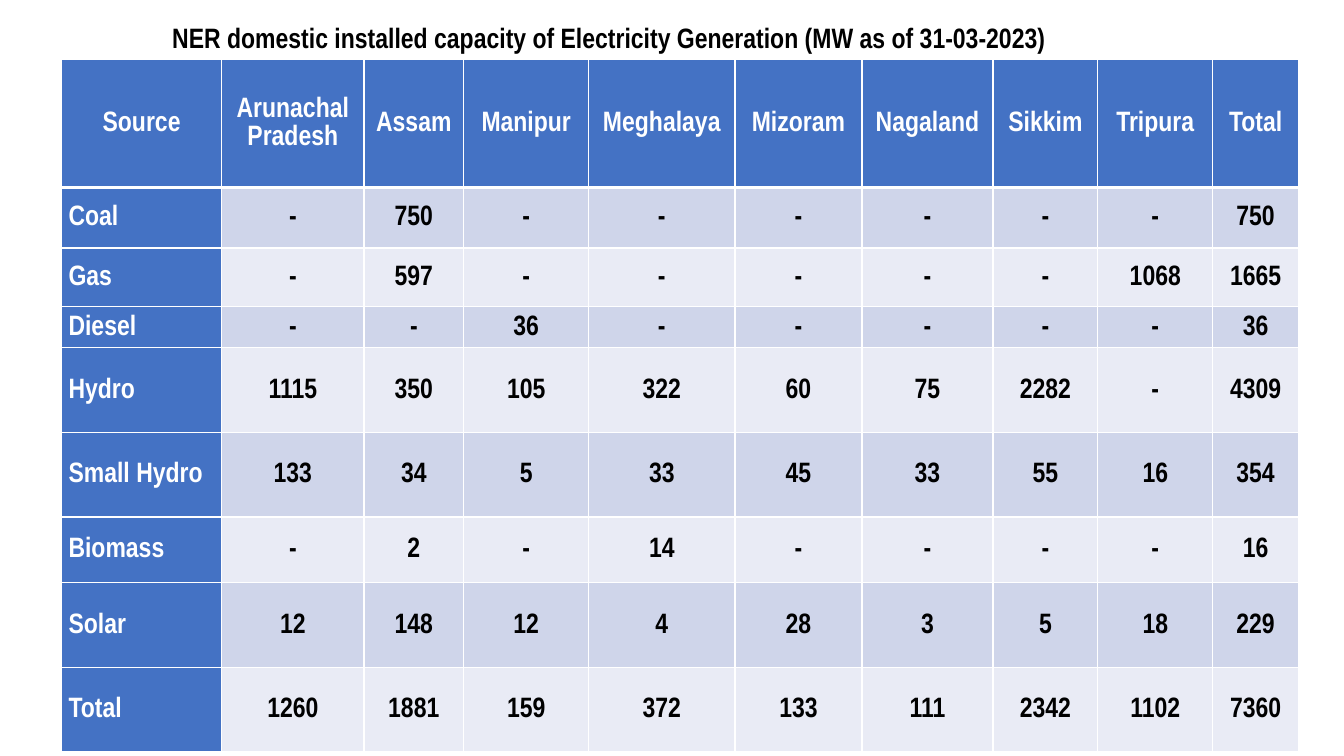
from typing import NamedTuple

from lxml.etree import SubElement
from pptx import Presentation
from pptx.dml.color import RGBColor
from pptx.enum.text import MSO_ANCHOR as Anchor, PP_ALIGN as Align
from pptx.oxml.ns import qn
from pptx.util import Emu, Pt

EMU_PER_PX = 9144
FONT = "Arial Narrow"
TEXT_SIZE = 20
LINE_SPACING = 1.07
CELL_MARGIN = 7
COLORS = {
    "heading": "4472C4",
    "band_dark": "CFD5EA",
    "band_light": "E9EBF5",
    "white": "FFFFFF",
    "black": "000000",
}


class Column(NamedTuple):
    title: str
    width: int


class SourceRow(NamedTuple):
    source: str
    height: int
    capacities: str


TITLE = "NER domestic installed capacity of Electricity Generation (MW as of 31-03-2023)"
HEADER_HEIGHT = 127
COLUMNS = [
    Column("Source", 159),
    Column("Arunachal Pradesh", 141),
    Column("Assam", 99),
    Column("Manipur", 124),
    Column("Meghalaya", 145),
    Column("Mizoram", 126),
    Column("Nagaland", 130),
    Column("Sikkim", 104),
    Column("Tripura", 114),
    Column("Total", 85),
]
SOURCE_ROWS = [
    SourceRow("Coal", 60, "- 750 - - - - - - 750"),
    SourceRow("Gas", 58, "- 597 - - - - - 1068 1665"),
    SourceRow("Diesel", 41, "- - 36 - - - - - 36"),
    SourceRow("Hydro", 84, "1115 350 105 322 60 75 2282 - 4309"),
    SourceRow("Small Hydro", 84, "133 34 5 33 45 33 55 16 354"),
    SourceRow("Biomass", 65, "- 2 - 14 - - - - 16"),
    SourceRow("Solar", 84, "12 148 12 4 28 3 5 18 229"),
    SourceRow("Total", 84, "1260 1881 159 372 133 111 2342 1102 7360"),
]


def px(length: int) -> Emu:
    return Emu(length * EMU_PER_PX)


def rgb(name: str) -> RGBColor:
    return RGBColor.from_string(COLORS[name])


def add_bold_run(p, text: str, color: str) -> None:
    r = p.add_run()
    r.text = text
    r.font.name = FONT
    r.font.size = Pt(TEXT_SIZE)
    r.font.bold = True
    r.font.color.rgb = rgb(color)


def set_borders(cell, top: int, bottom: int) -> None:
    """Draw white cell borders; the side borders are 1 pt wide."""
    tc_pr = cell._tc.get_or_add_tcPr()
    for side, points in (("L", 1), ("R", 1), ("T", top), ("B", bottom)):
        ln = SubElement(tc_pr, qn(f"a:ln{side}"), w=str(Pt(points)))
        fill = SubElement(ln, qn("a:solidFill"))
        SubElement(fill, qn("a:srgbClr"), val=COLORS["white"])


def fill_cell(cell, text: str, row: int, col: int) -> None:
    """Style a cell by its place: header row, source column or banded body."""
    is_heading = row == 0 or col == 0
    band = "band_dark" if row % 2 else "band_light"
    set_borders(cell, top=3 if row == 1 else 1, bottom=3 if row == 0 else 1)
    cell.fill.solid()
    cell.fill.fore_color.rgb = rgb("heading" if is_heading else band)
    cell.margin_left = cell.margin_right = px(CELL_MARGIN)
    cell.margin_top = cell.margin_bottom = 0
    cell.vertical_anchor = Anchor.MIDDLE
    p = cell.text_frame.paragraphs[0]
    p.alignment = Align.LEFT if col == 0 and row > 0 else Align.CENTER
    p.line_spacing = LINE_SPACING
    add_bold_run(p, text, "white" if is_heading else "black")


def add_capacity_table(slide, left: int, top: int) -> None:
    heights = [HEADER_HEIGHT] + [row.height for row in SOURCE_ROWS]
    texts = [[column.title for column in COLUMNS]]
    texts += [[row.source, *row.capacities.split()] for row in SOURCE_ROWS]
    width = sum(column.width for column in COLUMNS)
    table = slide.shapes.add_table(
        len(heights), len(COLUMNS), px(left), px(top), px(width), px(sum(heights))
    ).table
    for col, column in enumerate(COLUMNS):
        table.columns[col].width = px(column.width)
    for row, height in enumerate(heights):
        table.rows[row].height = px(height)
        for col, text in enumerate(texts[row]):
            fill_cell(table.cell(row, col), text, row, col)


def add_title(slide, left: int, top: int, width: int, height: int) -> None:
    tf = slide.shapes.add_textbox(px(left), px(top), px(width), px(height)).text_frame
    tf.word_wrap = False
    tf.vertical_anchor = Anchor.MIDDLE
    p = tf.paragraphs[0]
    p.alignment = Align.CENTER
    add_bold_run(p, TITLE, "black")


def main() -> None:
    prs = Presentation()
    prs.slide_width, prs.slide_height = px(1333), px(750)
    slide = prs.slides.add_slide(prs.slide_layouts[6])
    add_capacity_table(slide, left=61, top=59)
    add_title(slide, left=148, top=15, width=912, height=44)
    prs.save("out.pptx")


if __name__ == "__main__":
    main()
